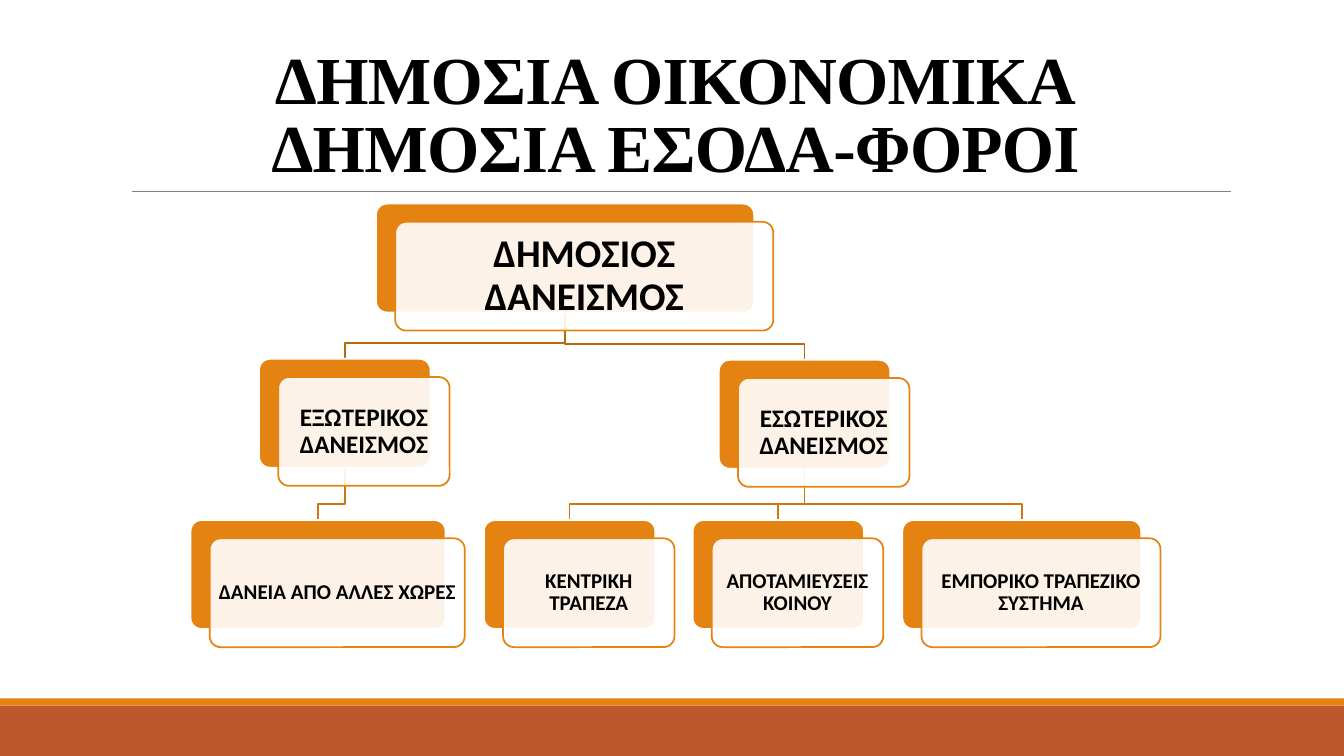
from collections import namedtuple

from lxml.etree import SubElement
from pptx import Presentation
from pptx.dml.color import RGBColor
from pptx.enum.shapes import MSO_CONNECTOR, MSO_SHAPE
from pptx.enum.text import MSO_ANCHOR, MSO_AUTO_SIZE, PP_ALIGN
from pptx.oxml.ns import qn
from pptx.util import Inches, Pt

COLORS = {
    "orange": "E48312",
    "rust": "BD582C",
    "upper_link": "B7690E",
    "lower_link": "CF7710",
    "rule": "808080",
    "white": "FFFFFF",
    "black": "000000",
}
CARD_HEIGHT = 1.08
FRONT_SHIFT_X, FRONT_SHIFT_Y = 0.19, 0.18
TEXT_MARGIN = 0.03
ELBOW_RISE = 0.16

Card = namedtuple("Card", "text left top width size inset parent")
CARDS = {
    "debt": Card("ΔΗΜΟΣΙΟΣ ΔΑΝΕΙΣΜΟΣ", 3.73, 2.02, 3.75, 28, 0.12, None),
    "external": Card("ΕΞΩΤΕΡΙΚΟΣ ΔΑΝΕΙΣΜΟΣ", 2.57, 3.56, 1.7, 18, 0.07, "debt"),
    "countries": Card("ΔΑΝΕΙΑ ΑΠΌ ΆΛΛΕΣ ΧΩΡΕΣ", 1.89, 5.16, 2.53, 15, 0.06, "external"),
    "internal": Card("ΕΣΩΤΕΡΙΚΟΣ ΔΑΝΕΙΣΜΟΣ", 7.13, 3.57, 1.7, 18, 0.07, "debt"),
    "central": Card("ΚΕΝΤΡΙΚΗ ΤΡΑΠΕΖΑ", 4.8, 5.16, 1.7, 15, 0.06, "internal"),
    "savings": Card("ΑΠΟΤΑΜΙΕΥΣΕΙΣ ΚΟΙΝΟΥ", 6.87, 5.16, 1.7, 15, 0.06, "internal"),
    "banks": Card("ΕΜΠΟΡΙΚΟ ΤΡΑΠΕΖΙΚΟ ΣΥΣΤΗΜΑ", 8.95, 5.16, 2.37, 15, 0.06, "internal"),
}


def color(name):
    return RGBColor.from_string(COLORS[name])


def write_text(frame, text, *, size, font="Calibri", spacing=0.9, inset=None,
               anchor=MSO_ANCHOR.MIDDLE, tracking=None):
    frame.word_wrap = True
    frame.auto_size = MSO_AUTO_SIZE.NONE
    frame.vertical_anchor = anchor
    if inset is not None:
        frame.margin_left = frame.margin_right = Inches(inset)
        frame.margin_top = frame.margin_bottom = Inches(inset)
    para = frame.paragraphs[0]
    para.text = text
    para.alignment = PP_ALIGN.CENTER
    para.line_spacing = spacing
    for span in para.runs:
        span.font.name = font
        span.font.size = Pt(size)
        span.font.bold = True
        span.font.color.rgb = color("black")
        if tracking is not None:
            span.font._element.set("spc", str(int(tracking * 100)))


def add_box(page, kind, left, top, width, height, fill, line=None, opacity=None):
    box = page.shapes.add_shape(
        kind, Inches(left), Inches(top), Inches(width), Inches(height))
    box.shadow.inherit = False
    box.fill.solid()
    box.fill.fore_color.rgb = color(fill)
    if opacity is not None:
        tint = box.fill._xPr.find(".//" + qn("a:srgbClr"))
        SubElement(tint, qn("a:alpha"), val=str(opacity * 1000))
    if line:
        box.line.color.rgb = color(line)
        box.line.width = Pt(1.25)
    else:
        box.line.fill.background()
    return box


def add_rule(page, left, right, top):
    rule = page.shapes.add_connector(
        MSO_CONNECTOR.STRAIGHT, Inches(left), Inches(top), Inches(right), Inches(top))
    rule.line.color.rgb = color("rule")
    rule.line.width = Pt(0.5)
    SubElement(rule._element.spPr, qn("a:effectLst"))


def add_link(page, parent, child):
    start_x = parent.left + parent.width / 2
    start_y = parent.top + CARD_HEIGHT
    end_x = child.left + child.width / 2
    bend_y = child.top - ELBOW_RISE
    builder = page.shapes.build_freeform(Inches(start_x), Inches(start_y))
    points = [(start_x, bend_y), (end_x, bend_y), (end_x, child.top)]
    builder.add_line_segments([(Inches(x), Inches(y)) for x, y in points], close=False)
    link = builder.convert_to_shape()
    link.shadow.inherit = False
    link.fill.background()
    link.line.color.rgb = color("lower_link" if parent.parent else "upper_link")
    link.line.width = Pt(1.25)


def add_card(page, card):
    front_left, front_top = card.left + FRONT_SHIFT_X, card.top + FRONT_SHIFT_Y
    back = add_box(page, MSO_SHAPE.ROUNDED_RECTANGLE, card.left, card.top,
                   card.width, CARD_HEIGHT, "orange", line="white")
    front = add_box(page, MSO_SHAPE.ROUNDED_RECTANGLE, front_left, front_top,
                    card.width, CARD_HEIGHT, "white", line="orange", opacity=90)
    for box in (back, front):
        box.adjustments[0] = 0.1
    label = page.shapes.add_textbox(
        Inches(front_left + TEXT_MARGIN), Inches(front_top + TEXT_MARGIN),
        Inches(card.width - 2 * TEXT_MARGIN), Inches(CARD_HEIGHT - 2 * TEXT_MARGIN))
    write_text(label.text_frame, card.text, size=card.size, inset=card.inset)


def add_title(page, text):
    title = page.shapes.title
    title.left, title.top = Inches(1.2), Inches(0.31)
    title.width, title.height = Inches(11), Inches(1.59)
    write_text(title.text_frame, text, size=48, font="Times New Roman",
               spacing=0.85, anchor=MSO_ANCHOR.BOTTOM, tracking=-0.5)


def main():
    deck = Presentation()
    deck.slide_width, deck.slide_height = Inches(13.33), Inches(7.5)
    page = deck.slides.add_slide(deck.slide_layouts[5])

    # Footer bands, title and rule
    add_box(page, MSO_SHAPE.RECTANGLE, 0, 7, 13.33, 0.5, "rust")
    add_box(page, MSO_SHAPE.RECTANGLE, 0, 6.93, 13.33, 0.07, "orange")
    add_rule(page, 1.31, 12.21, 1.9)
    add_title(page, "ΔΗΜΟΣΙΑ ΟΙΚΟΝΟΜΙΚΑ\vΔΗΜΟΣΙΑ ΕΣΟΔΑ-ΦΟΡΟΙ")

    # Links lie behind the cards
    for card in reversed(CARDS.values()):
        if card.parent:
            add_link(page, CARDS[card.parent], card)

    # Hierarchy cards
    for card in CARDS.values():
        add_card(page, card)

    deck.save("out.pptx")


if __name__ == "__main__":
    main()
